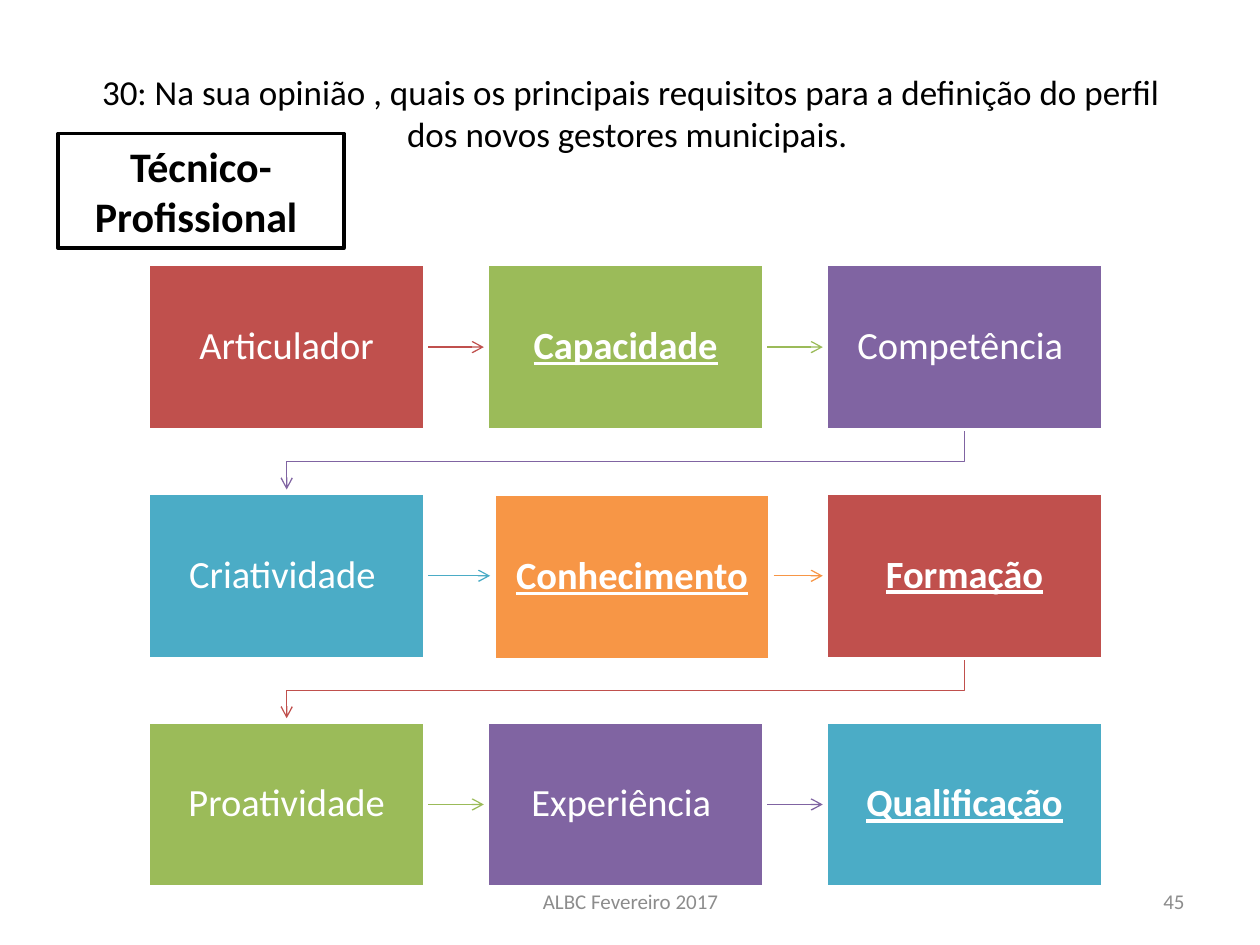
import pptx
import pptx.util
import pptx.dml.color
import pptx.enum.shapes
import pptx.enum.text
import pptx.oxml.ns
from lxml import etree

Inches = pptx.util.Inches
Pt = pptx.util.Pt
ALIGN = pptx.enum.text.PP_ALIGN
RECTANGLE = pptx.enum.shapes.MSO_SHAPE.RECTANGLE
STRAIGHT = pptx.enum.shapes.MSO_CONNECTOR.STRAIGHT
qn = pptx.oxml.ns.qn

COLOURS = {
    "red": "C0504D", "green": "9BBB59", "purple": "8064A2", "teal": "4BACC6",
    "orange": "F79646", "white": "FFFFFF", "black": "000000", "grey": "8C8C8C",
}
STEP_COLOURS = ["red", "green", "purple", "teal", "orange"]

# Wording, and whether it is emphasised
STEPS = [
    ("Articulador", False), ("Capacidade", True), ("Competência ", False),
    ("Criatividade ", False), ("Conhecimento", True), ("Formação", True),
    ("Proatividade", False), ("Experiência ", False), ("Qualificação", True),
]
COLUMNS = 3
STEP_WIDTH, STEP_HEIGHT = 2.19, 1.31
NUDGES = {4: (0.05, 0.01)}  # the fifth step sits slightly off the grid


def rgb(name):
    return pptx.dml.color.RGBColor.from_string(COLOURS[name])


def write(shape, text, size, colour, align=ALIGN.CENTER, bold=False, underline=False):
    frame = shape.text_frame
    frame.word_wrap = True
    frame.vertical_anchor = pptx.enum.text.MSO_ANCHOR.MIDDLE
    frame.text = text
    para = frame.paragraphs[0]
    para.alignment = align
    font = para.runs[0].font
    font.name, font.size, font.color.rgb = "Calibri", Pt(size), rgb(colour)
    font.bold, font.underline = bold, underline
    return para


def add_text(page, box, text, size, colour, align=ALIGN.CENTER):
    shape = page.shapes.add_textbox(*map(Inches, box))
    write(shape, text, size, colour, align)


def add_panel(page, box, fill, line):
    panel = page.shapes.add_shape(RECTANGLE, *map(Inches, box))
    panel.shadow.inherit = False
    panel.fill.solid()
    panel.fill.fore_color.rgb = rgb(fill)
    panel.line.color.rgb = rgb(line)
    panel.line.width = Pt(2)
    return panel


def add_arrow(page, points, colour):
    """Draw an open line through the points, with an arrowhead at the last."""
    points = [(Inches(x), Inches(y)) for x, y in points]
    if len(points) == 2:
        arrow = page.shapes.add_connector(STRAIGHT, *points[0], *points[1])
    else:
        builder = page.shapes.build_freeform(*points[0])
        builder.add_line_segments(points[1:], close=False)
        arrow = builder.convert_to_shape()
        arrow.fill.background()
    arrow.line.color.rgb = rgb(colour)
    arrow.line.width = Pt(0.75)
    properties = arrow._element.spPr
    etree.SubElement(properties.find(qn("a:ln")), qn("a:tailEnd"), type="arrow")
    etree.SubElement(properties, qn("a:effectLst"))


def step_box(index, left, top, column_pitch, row_pitch):
    row, column = divmod(index, COLUMNS)
    shift_x, shift_y = NUDGES.get(index, (0, 0))
    return (left + column * column_pitch + shift_x, top + row * row_pitch + shift_y,
            STEP_WIDTH, STEP_HEIGHT)


def add_step(page, box, text, emphasised, colour):
    panel = add_panel(page, box, colour, "white")
    frame = panel.text_frame
    frame.margin_left = frame.margin_right = Inches(0.16)
    frame.margin_top = frame.margin_bottom = Inches(0.17)
    para = write(panel, text, 22, "white", bold=emphasised, underline=emphasised)
    para.line_spacing = 0.9


def add_process(page, box):
    """Place the steps in rows, each joined to the next by an arrow."""
    left, top, width, height = box
    rows = len(STEPS) // COLUMNS
    column_pitch = (width - STEP_WIDTH) / (COLUMNS - 1)
    row_pitch = (height - STEP_HEIGHT) / (rows - 1)
    boxes = [step_box(i, left, top, column_pitch, row_pitch) for i in range(len(STEPS))]
    colours = [STEP_COLOURS[i % len(STEP_COLOURS)] for i in range(len(STEPS))]
    gap = 0.03

    for index, (start, end) in enumerate(zip(boxes, boxes[1:])):
        if (index + 1) % COLUMNS:
            middle = top + index // COLUMNS * row_pitch + STEP_HEIGHT / 2
            points = [(start[0] + STEP_WIDTH + gap, middle), (end[0] - gap, middle)]
        else:
            start_x, end_x = start[0] + STEP_WIDTH / 2, end[0] + STEP_WIDTH / 2
            bottom = start[1] + STEP_HEIGHT
            turn = (bottom + end[1]) / 2
            points = [(start_x, bottom), (start_x, turn), (end_x, turn), (end_x, end[1] - gap)]
        add_arrow(page, points, colours[index])

    for place, (text, emphasised), colour in zip(boxes, STEPS, colours):
        add_step(page, place, text, emphasised, colour)


def add_category(page, box):
    panel = add_panel(page, box, "white", "black")
    write(panel, "Técnico-Profissional ", 24, "black", bold=True)


def add_footer(page, box):
    left, top, width, height = box
    add_text(page, (left, top, 3.17, height), "ALBC Fevereiro 2017", 12, "grey")
    add_text(page, (left + width - 2.33, top, 2.33, height), "45", 12, "grey", ALIGN.RIGHT)


def main():
    deck = pptx.Presentation()
    deck.slide_width, deck.slide_height = Inches(10), Inches(7.5)
    page = deck.slides.add_slide(deck.slide_layouts[6])
    add_text(page, (0.51, 0.27, 9, 1.25),
             "30: Na sua opinião , quais os principais requisitos para a definição "
             "do perfil dos novos gestores municipais. ", 20, "black")
    add_process(page, (1.18, 2.1, 7.57, 4.94))
    add_category(page, (0.46, 1.06, 2.27, 0.91))
    add_footer(page, (3.42, 6.95, 6.08, 0.4))
    deck.save("out.pptx")


if __name__ == "__main__":
    main()
